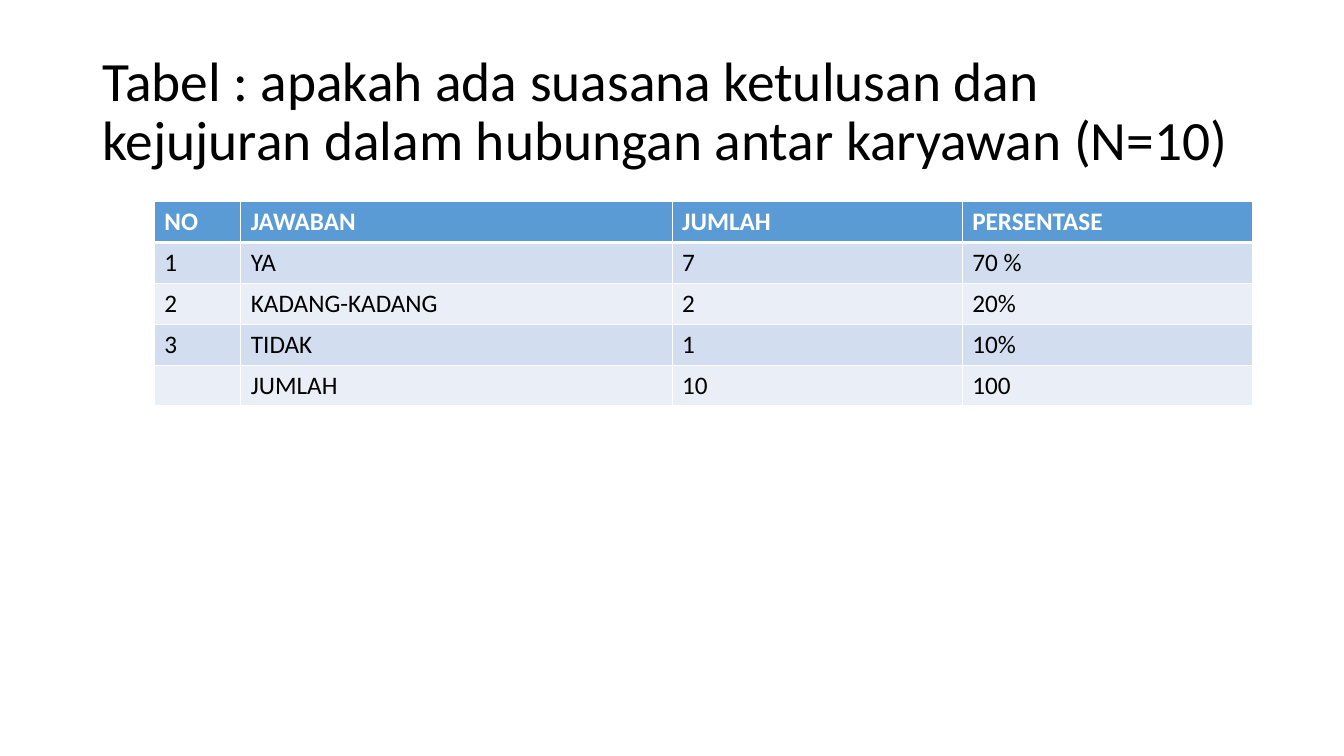
"""Build a slide with a survey question and its table of answers."""
from typing import NamedTuple

from lxml.etree import SubElement
from pptx import Presentation
from pptx.dml.color import RGBColor
from pptx.enum.text import MSO_ANCHOR
from pptx.oxml.ns import qn
from pptx.slide import Slide
from pptx.table import _Cell as Cell
from pptx.text.text import TextFrame
from pptx.util import Cm, Pt

BLACK = RGBColor(0x00, 0x00, 0x00)
WHITE = RGBColor(0xFF, 0xFF, 0xFF)
HEADER_BLUE = RGBColor(0x5B, 0x9B, 0xD5)
BAND_DARK = RGBColor(0xD2, 0xDE, 0xEF)
BAND_LIGHT = RGBColor(0xEA, 0xEF, 0xF7)

FONT = "Calibri"
TITLE = "Tabel : apakah ada suasana ketulusan dan kejujuran dalam hubungan antar karyawan (N=10)"
ROW_HEIGHT = 1.03


class Column(NamedTuple):
    heading: str
    width: float
    answers: tuple[str, ...]


COLUMNS = (
    Column("NO", 2.18, ("1", "2", "3", "")),
    Column("JAWABAN", 10.87, ("YA", "KADANG-KADANG", "TIDAK", "JUMLAH")),
    Column("JUMLAH", 7.31, ("7", "2", "1", "10")),
    Column("PERSENTASE", 7.31, ("70 %", "20%", "10%", "100")),
)


def write_text(frame: TextFrame, text: str, *, size: float, color: RGBColor = BLACK,
               bold: bool = False, line_spacing: float = 1.0) -> None:
    paragraph = frame.paragraphs[0]
    paragraph.line_spacing = line_spacing
    if not text:
        return
    run = paragraph.add_run()
    run.text = text
    run.font.name = FONT
    run.font.size = Pt(size)
    run.font.bold = bold
    run.font.color.rgb = color


def set_borders(cell: Cell, top: float, bottom: float) -> None:
    properties = cell._tc.get_or_add_tcPr()
    for side, width in (("L", 1), ("R", 1), ("T", top), ("B", bottom)):
        line = SubElement(properties, qn(f"a:ln{side}"), w=str(Pt(width)))
        fill = SubElement(line, qn("a:solidFill"))
        SubElement(fill, qn("a:srgbClr"), val=str(WHITE))


def fill_cell(cell: Cell, text: str, row: int) -> None:
    is_header = row == 0
    set_borders(cell, top=3 if row == 1 else 1, bottom=3 if is_header else 1)
    cell.fill.solid()
    band = BAND_DARK if row % 2 else BAND_LIGHT
    cell.fill.fore_color.rgb = HEADER_BLUE if is_header else band
    write_text(cell.text_frame, text, size=18, bold=is_header,
               color=WHITE if is_header else BLACK)


def add_title(slide: Slide) -> None:
    frame = slide.shapes.add_textbox(Cm(2.33), Cm(1.01), Cm(29.21), Cm(3.68)).text_frame
    frame.word_wrap = True
    frame.vertical_anchor = MSO_ANCHOR.MIDDLE
    write_text(frame, TITLE, size=39.6, line_spacing=0.9)


def add_answer_table(slide: Slide) -> None:
    row_count = 1 + len(COLUMNS[0].answers)
    width = sum(column.width for column in COLUMNS)
    table = slide.shapes.add_table(row_count, len(COLUMNS), Cm(3.89), Cm(5.08),
                                   Cm(width), Cm(ROW_HEIGHT * row_count)).table
    for table_row in table.rows:
        table_row.height = Cm(ROW_HEIGHT)
    for index, column in enumerate(COLUMNS):
        table.columns[index].width = Cm(column.width)
        for row, text in enumerate((column.heading, *column.answers)):
            fill_cell(table.cell(row, index), text, row)


def main() -> None:
    presentation = Presentation()
    presentation.slide_width = Cm(33.87)
    presentation.slide_height = Cm(19.05)
    slide = presentation.slides.add_slide(presentation.slide_layouts[6])
    add_title(slide)
    add_answer_table(slide)
    presentation.save("out.pptx")


if __name__ == "__main__":
    main()
